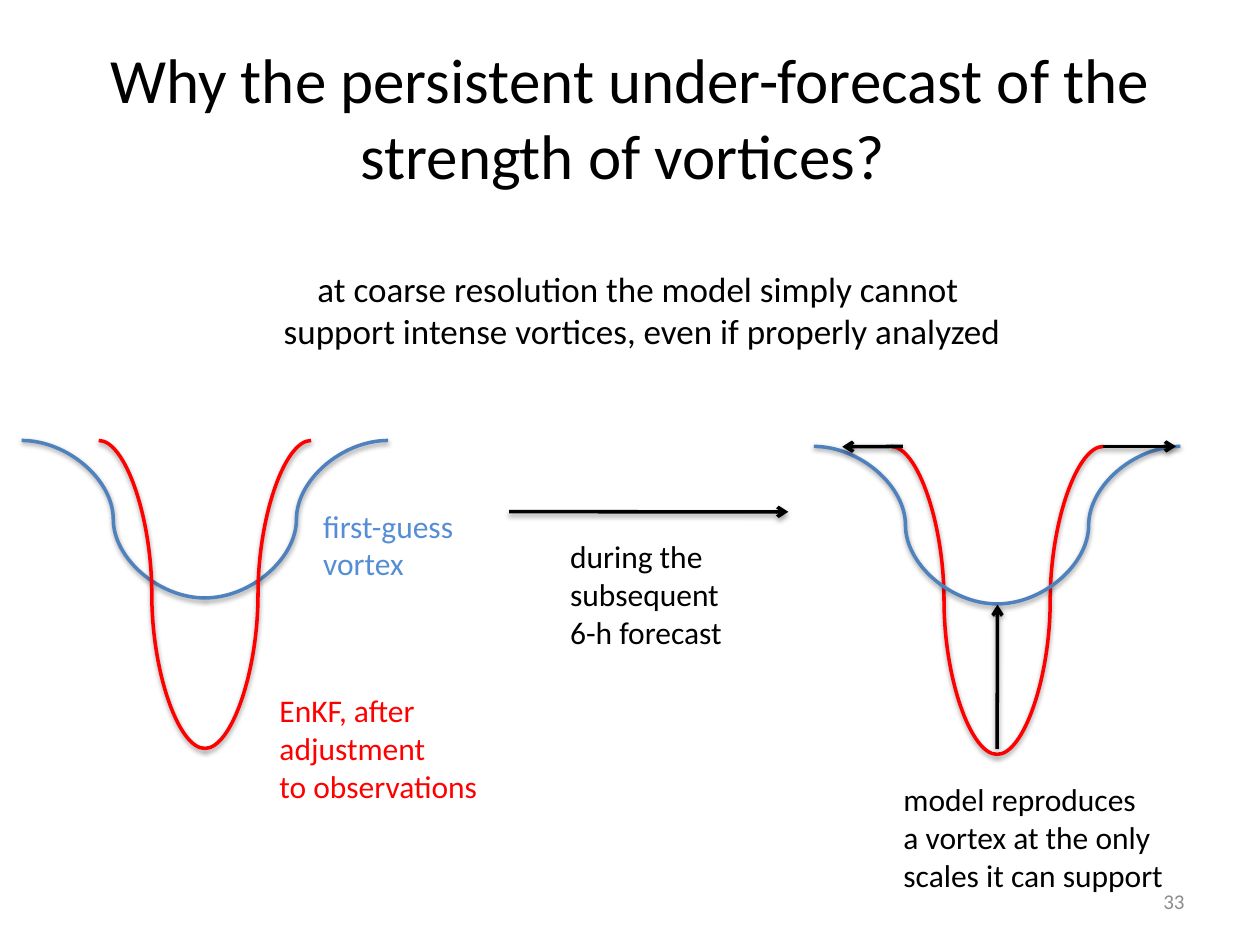
import lxml.etree
import pptx
import pptx.dml.color
import pptx.enum.shapes
import pptx.enum.text
import pptx.oxml.ns
import pptx.util

Pt = pptx.util.Pt
RGBColor = pptx.dml.color.RGBColor
Align = pptx.enum.text.PP_ALIGN
Anchor = pptx.enum.text.MSO_ANCHOR
AutoSize = pptx.enum.text.MSO_AUTO_SIZE
Connector = pptx.enum.shapes.MSO_CONNECTOR

BLACK = RGBColor(0x00, 0x00, 0x00)
RED = RGBColor(0xFF, 0x00, 0x00)
CURVE_BLUE = RGBColor(0x4F, 0x81, 0xBD)
LABEL_BLUE = RGBColor(0x55, 0x8E, 0xD5)
GREY = RGBColor(0x8C, 0x8C, 0x8C)

# Colour, half width and depth of each vortex profile
FIRST_GUESS = (CURVE_BLUE, 104.7, 90)
ANALYSIS = (RED, 60.7, 176)


def add_element(parent, tag, **attributes):
    return lxml.etree.SubElement(parent, pptx.oxml.ns.qn(tag), attributes)


def apply_format(target, values):
    for name, value in values.items():
        setattr(target, name, value)


class SlideBuilder:
    font_name = "Calibri"
    line_width = 2

    def __init__(self, page):
        self.page = page

    def fill_text(self, box, lines, size, color, align, frame_format):
        frame = box.text_frame
        apply_format(frame, frame_format)
        for index, line in enumerate(lines):
            para = frame.add_paragraph() if index else frame.paragraphs[0]
            para.alignment = align
            span = para.add_run()
            span.text = line
            apply_format(span.font, {"name": self.font_name, "size": Pt(size)})
            span.font.color.rgb = color

    def title(self, text, left, top, width, height, size=36):
        box = self.page.shapes.title
        apply_format(box, {"left": Pt(left), "top": Pt(top),
                           "width": Pt(width), "height": Pt(height)})
        self.fill_text(box, [text], size, BLACK, Align.CENTER,
                       {"vertical_anchor": Anchor.MIDDLE, "word_wrap": True})

    def label(self, lines, left, top, width, height, size=18, color=BLACK,
              align=Align.LEFT):
        box = self.page.shapes.add_textbox(Pt(left), Pt(top), Pt(width), Pt(height))
        self.fill_text(box, lines, size, color, align,
                       {"word_wrap": False, "auto_size": AutoSize.SHAPE_TO_FIT_TEXT})

    def page_number(self, text, left, top, width, height):
        box = self.page.shapes.add_textbox(Pt(left), Pt(top), Pt(width), Pt(height))
        self.fill_text(box, [text], 12, GREY, Align.RIGHT,
                       {"word_wrap": True, "vertical_anchor": Anchor.MIDDLE})

    def connector(self, kind, start, end, color):
        line = self.page.shapes.add_connector(
            kind, *(Pt(value) for value in (*start, *end)))
        line.line.color.rgb = color
        line.line.width = Pt(self.line_width)
        effects = add_element(line._element.spPr, "a:effectLst")
        shadow = add_element(effects, "a:outerShdw", blurRad=str(Pt(3.1)),
                             dist=str(Pt(1.6)), dir="5400000", rotWithShape="0")
        shade = add_element(shadow, "a:srgbClr", val=str(BLACK))
        add_element(shade, "a:alpha", val="38000")
        return line

    def arrow(self, start, end):
        line = self.connector(Connector.STRAIGHT, start, end, BLACK)
        outline = line._element.spPr.find(pptx.oxml.ns.qn("a:ln"))
        add_element(outline, "a:tailEnd", type="arrow")

    def vortex(self, center, top, profiles):
        for color, half_width, depth in profiles:
            for side in (-1, 1):
                self.connector(Connector.CURVE, (center + side * half_width, top),
                               (center, top + depth), color)


def main():
    deck = pptx.Presentation()
    deck.slide_width, deck.slide_height = Pt(720), Pt(540)
    builder = SlideBuilder(deck.slides.add_slide(deck.slide_layouts[5]))

    # Heading
    builder.title("Why the persistent under-forecast of the strength of vortices? ",
                  36, 21.6, 648, 90)

    # Vortex before the forecast
    builder.vortex(117.1, 251.7, [FIRST_GUESS, ANALYSIS])
    builder.label(["first-guess", "vortex"], 177.6, 286, 89.3, 51, color=LABEL_BLUE)
    builder.label(["EnKF, after", "adjustment", "to observations"],
                  152.6, 391.5, 129, 72.7, color=RED)

    # Forecast step
    builder.arrow((290.9, 292.4), (450.5, 292.5))
    builder.label(["during the", "subsequent", "6-h forecast"], 318.7, 303.6, 102, 72.7)

    # Vortex after the forecast, filling and widening
    builder.vortex(569.8, 255.1, [ANALYSIS, FIRST_GUESS])
    builder.arrow((516, 255.1), (481.3, 255.3))
    builder.arrow((630.4, 255.1), (672, 255.1))
    builder.arrow((569.8, 428), (570, 345.5))
    builder.label(["model reproduces", "a vortex at the only", "scales it can support"],
                  509.2, 442.4, 164, 72.7)

    # Explanation and page number
    builder.label(["at coarse resolution the model simply cannot ",
                   "support intense vortices, even if properly analyzed"],
                  153.4, 149.2, 427, 55.7, size=20, align=Align.CENTER)
    builder.page_number("33", 516, 500.5, 168, 28.8)

    deck.save("out.pptx")


if __name__ == "__main__":
    main()
